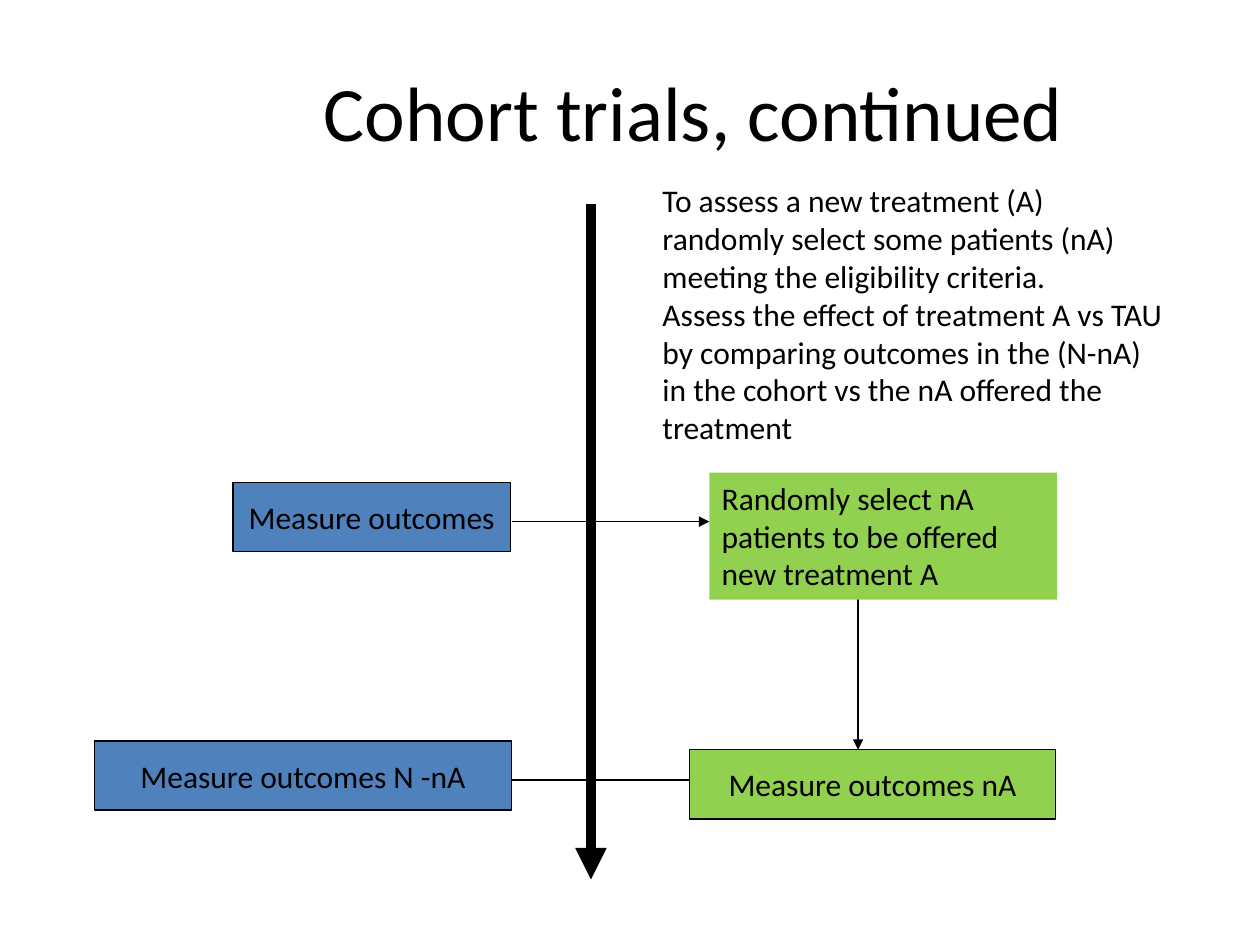
"""Build the cohort trials flow slide."""
from dataclasses import dataclass
from typing import Optional

from lxml import etree
from pptx import Presentation
from pptx.dml.color import RGBColor
from pptx.enum.shapes import MSO_CONNECTOR, MSO_SHAPE
from pptx.enum.text import MSO_ANCHOR, PP_ALIGN
from pptx.oxml.ns import qn
from pptx.util import Pt

EMU_PER_PX = 9144
STRAIGHT = MSO_CONNECTOR.STRAIGHT
RECTANGLE = MSO_SHAPE.RECTANGLE
TOP, MIDDLE = MSO_ANCHOR.TOP, MSO_ANCHOR.MIDDLE
LEFT, CENTER = PP_ALIGN.LEFT, PP_ALIGN.CENTER
TITLE_ONLY = 5


@dataclass(frozen=True)
class Theme:
    font: str = "Calibri"
    ink: RGBColor = RGBColor(0x00, 0x00, 0x00)
    cohort: RGBColor = RGBColor(0x4F, 0x81, 0xBD)
    treated: RGBColor = RGBColor(0x92, 0xD0, 0x50)
    title_size: int = 44
    body_size: int = 18
    thin: float = 0.75
    thick: float = 6


THEME = Theme()


@dataclass(frozen=True)
class Frame:
    left: int
    top: int
    width: int
    height: int

    def emu(self) -> tuple:
        return tuple(map(px, (self.left, self.top, self.width, self.height)))


@dataclass(frozen=True)
class Box:
    text: str
    frame: Frame
    fill: RGBColor
    outlined: bool = True


@dataclass(frozen=True)
class Link:
    start: tuple
    end: tuple
    width: float = THEME.thin
    arrow: bool = False


TIME_X, SELECT_Y, OUTCOME_Y, TREATED_X = 469, 414, 619, 681
COHORT_RIGHT, SELECT_LEFT, OUTCOME_LEFT = 406, 563, 547
OUTCOME_TOP = 595

TIMELINE = Link((TIME_X, 162), (TIME_X, 698), THEME.thick, True)
LINKS = (
    TIMELINE,
    Link((TIME_X, SELECT_Y), (SELECT_LEFT, SELECT_Y), arrow=True),
    Link((COHORT_RIGHT, SELECT_Y), (TIME_X, SELECT_Y)),
    Link((COHORT_RIGHT, OUTCOME_Y), (OUTCOME_LEFT, OUTCOME_Y)),
    Link((TREATED_X, 446), (TREATED_X, OUTCOME_TOP), arrow=True),
)
BOXES = (
    Box("Measure outcomes", Frame(185, 383, 220, 55), THEME.cohort),
    Box("Measure outcomes N -nA", Frame(75, 588, 331, 55), THEME.cohort),
    Box("Measure outcomes nA", Frame(OUTCOME_LEFT, OUTCOME_TOP, 291, 55), THEME.treated),
    Box("Randomly select nA patients to be offered new treatment A",
        Frame(SELECT_LEFT, 375, 276, 101), THEME.treated, outlined=False),
)
TITLE = "Cohort trials, continued"
TITLE_FRAME = Frame(167, 21, 767, 134)
EXPLANATION_FRAME = Frame(516, 139, 417, 222)
EXPLANATION = (
    "To assess a new treatment (A) randomly select some patients (nA) "
    "meeting the eligibility criteria.",
    "Assess the effect of treatment A vs TAU by comparing outcomes in the "
    "(N-nA) in the cohort vs the nA offered the treatment",
)


def px(length: int) -> int:
    return length * EMU_PER_PX


def write(shape, texts: tuple, size: int, align, anchor, wrap: bool = True) -> None:
    text_frame = shape.text_frame
    text_frame.word_wrap = wrap
    text_frame.vertical_anchor = anchor
    for index, text in enumerate(texts):
        paragraph = text_frame.add_paragraph() if index else text_frame.paragraphs[0]
        paragraph.alignment = align
        run = paragraph.add_run()
        run.text = text
        run.font.name = THEME.font
        run.font.size = Pt(size)
        run.font.color.rgb = THEME.ink


def draw_title(slide) -> None:
    title = slide.shapes.title
    title.left, title.top, title.width, title.height = TITLE_FRAME.emu()
    write(title, (TITLE,), THEME.title_size, CENTER, MIDDLE)


def draw_link(slide, link: Link) -> None:
    connector = slide.shapes.add_connector(
        STRAIGHT, *map(px, link.start + link.end))
    connector.line.color.rgb = THEME.ink
    connector.line.width = Pt(link.width)
    if link.arrow:
        etree.SubElement(connector.line._get_or_add_ln(), qn("a:tailEnd"), type="triangle")
    etree.SubElement(connector._element.spPr, qn("a:effectLst"))


def draw_box(slide, box: Box) -> None:
    shape = slide.shapes.add_shape(RECTANGLE, *box.frame.emu())
    shape.shadow.inherit = False
    shape.fill.solid()
    shape.fill.fore_color.rgb = box.fill
    if box.outlined:
        shape.line.color.rgb = THEME.ink
        shape.line.width = Pt(THEME.thin)
        write(shape, (box.text,), THEME.body_size, CENTER, MIDDLE, wrap=False)
    else:
        shape.line.fill.background()
        write(shape, (box.text,), THEME.body_size, LEFT, TOP)


def draw_explanation(slide) -> None:
    text_box = slide.shapes.add_textbox(*EXPLANATION_FRAME.emu())
    write(text_box, EXPLANATION, THEME.body_size, LEFT, TOP)


def main() -> None:
    presentation = Presentation()
    presentation.slide_width = px(1000)
    presentation.slide_height = px(750)
    slide = presentation.slides.add_slide(presentation.slide_layouts[TITLE_ONLY])
    draw_title(slide)
    for link in LINKS:
        draw_link(slide, link)
    for box in BOXES:
        draw_box(slide, box)
    draw_explanation(slide)
    presentation.save("out.pptx")


if __name__ == "__main__":
    main()
